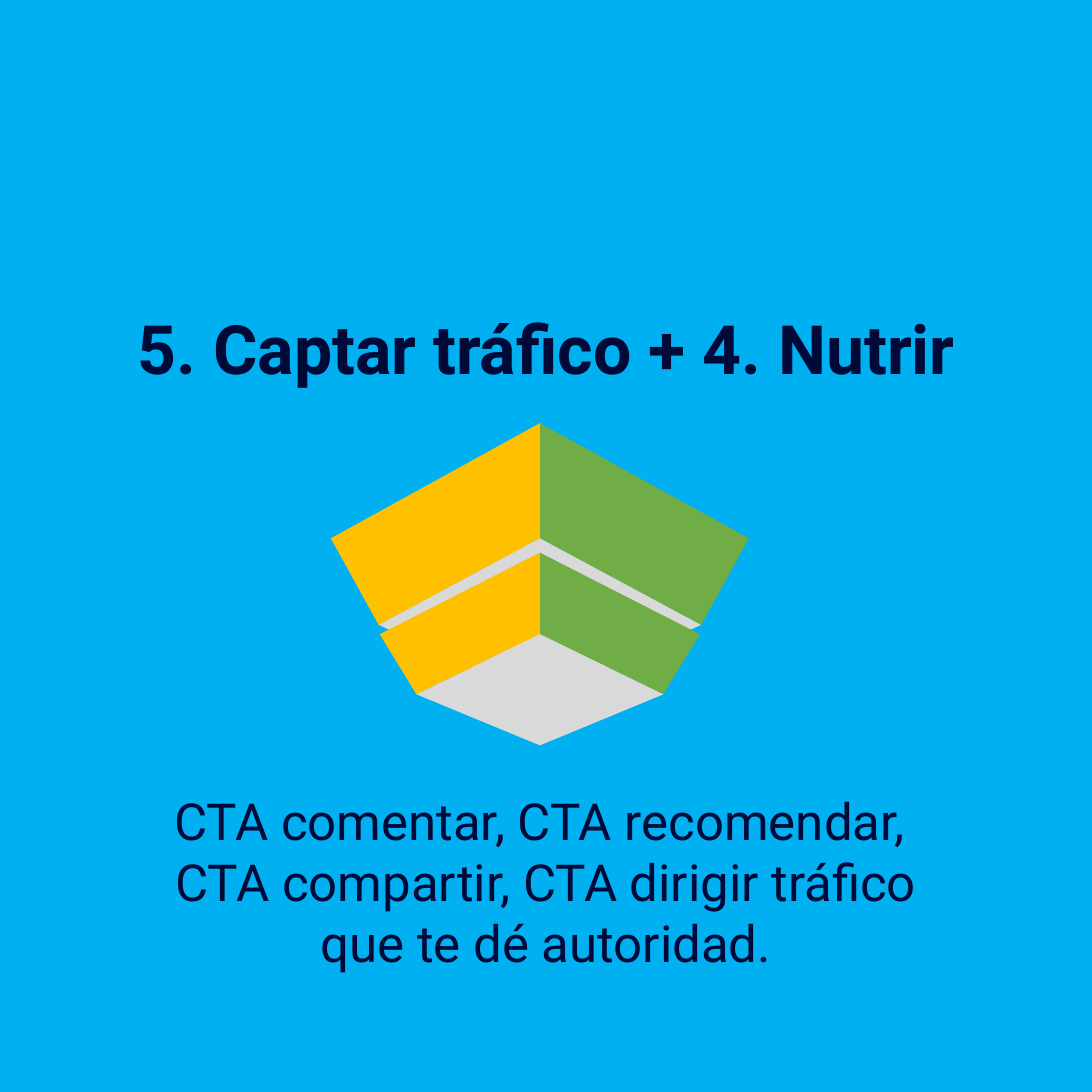
from pptx import Presentation
from pptx.dml.color import RGBColor
from pptx.enum.text import MSO_ANCHOR, PP_ALIGN
from pptx.util import Inches, Pt

SKY = RGBColor(0x00, 0xB0, 0xF0)
NAVY = RGBColor(0x00, 0x0A, 0x39)
GREEN = RGBColor(0x70, 0xAD, 0x47)
AMBER = RGBColor(0xFF, 0xC0, 0x00)
GREY = RGBColor(0xD9, 0xD9, 0xD9)

CENTER = PP_ALIGN.CENTER
TOP, MIDDLE = MSO_ANCHOR.TOP, MSO_ANCHOR.MIDDLE
FONT = "Roboto"
AXIS = 5.295  # vertical symmetry line of the pyramid


def add_polygon(page, points, color):
    corners = [(Inches(x), Inches(y)) for x, y in points]
    builder = page.shapes.build_freeform(*corners[0])
    builder.add_line_segments(corners[1:], close=True)
    shape = builder.convert_to_shape()
    shape.shadow.inherit = False
    shape.fill.solid()
    shape.fill.fore_color.rgb = color
    shape.line.fill.background()


def add_tier(page, top, ridge, shoulder, foot, tip, wide, narrow):
    """Draw two side walls and the underside; wide and narrow are half widths."""
    for side, color in ((1, GREEN), (-1, AMBER)):
        wall = [(AXIS, top), (AXIS + side * wide, shoulder),
                (AXIS + side * narrow, foot), (AXIS, ridge)]
        add_polygon(page, wall, color)
    underside = [(AXIS - narrow, foot), (AXIS, ridge),
                 (AXIS + narrow, foot), (AXIS, tip)]
    add_polygon(page, underside, GREY)


def add_text(page, text, left, top, width, height, size, inset=0,
             anchor=TOP, bold=False):
    box = page.shapes.add_textbox(Inches(left), Inches(top),
                                  Inches(width), Inches(height))
    frame = box.text_frame
    frame.word_wrap = True
    frame.vertical_anchor = anchor
    frame.margin_left = frame.margin_right = Inches(inset)
    frame.margin_top = frame.margin_bottom = Inches(inset)
    para = frame.paragraphs[0]
    para.text = text
    para.alignment = CENTER
    for span in para.runs:
        span.font.name = FONT
        span.font.size = Pt(size)
        span.font.bold = bold
        span.font.color.rgb = NAVY
    return para


def main():
    deck = Presentation()
    deck.slide_width = deck.slide_height = Inches(10.71)
    page = deck.slides.add_slide(deck.slide_layouts[6])
    page.background.fill.solid()
    page.background.fill.fore_color.rgb = SKY

    # Upper tier of the inverted pyramid
    add_tier(page, top=4.15, ridge=5.28, shoulder=5.28, foot=6.13, tip=6.84,
             wide=2.05, narrow=1.58)

    # Calls to action
    actions = add_text(page, "CTA comentar, CTA recomendar, \v"
                       "CTA compartir, CTA dirigir tráfico\v"
                       "que te dé autoridad.", 0.75, 7.74, 9.21, 1.89, 36)
    actions.space_after = Pt(15)

    # Lower tier, in front of the upper one
    add_tier(page, top=5.42, ridge=6.22, shoulder=6.22, foot=6.81, tip=7.31,
             wide=1.57, narrow=1.21)

    # Heading
    heading = add_text(page, "5. Captar tráfico + 4. Nutrir", 1.07, 2.25,
                       8.58, 2.2, 48, inset=0.11, anchor=MIDDLE, bold=True)
    heading.line_spacing = 1.15

    deck.save("out.pptx")


if __name__ == "__main__":
    main()
